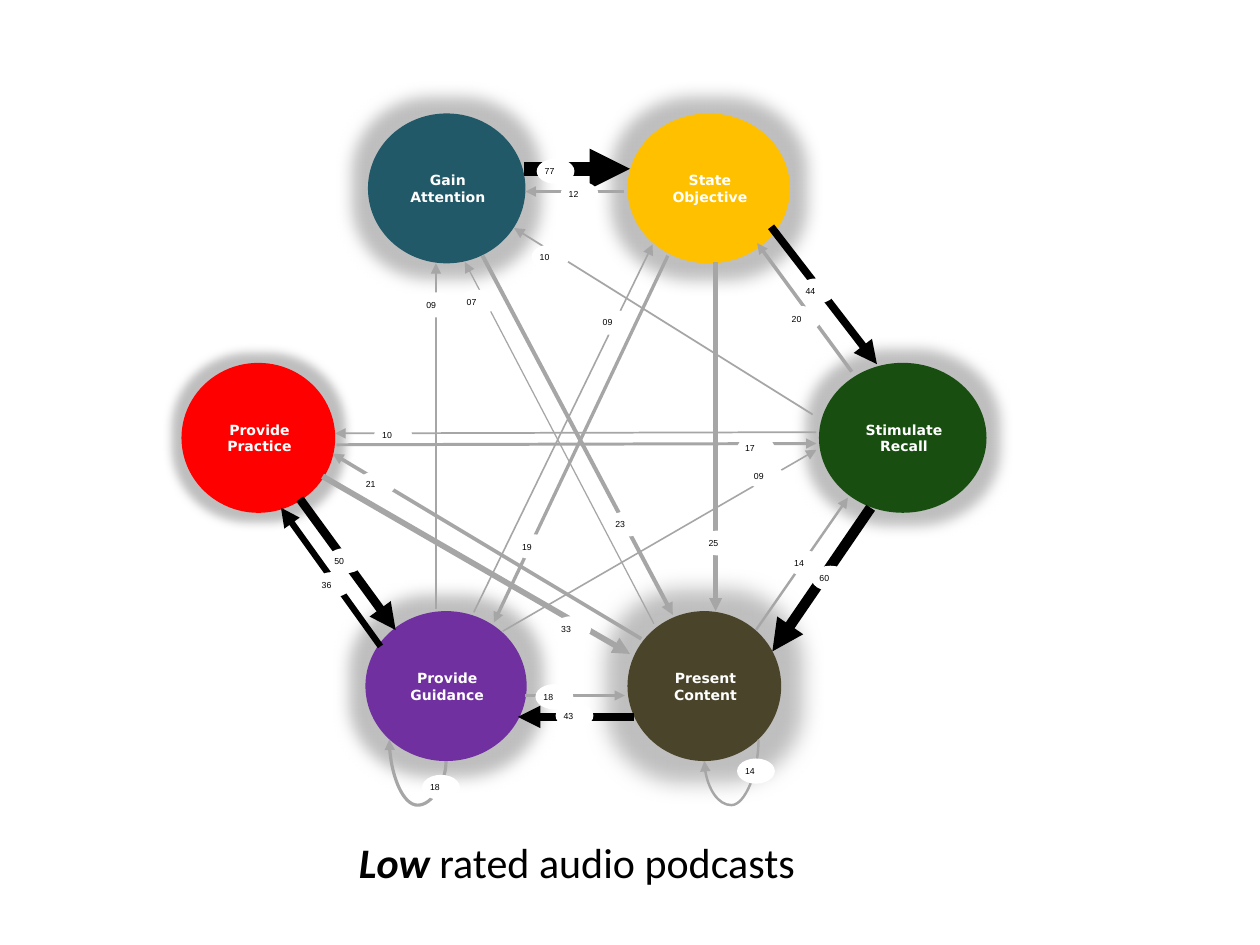
"""Build a slide mapping the transitions between teaching steps in low rated podcasts."""
from dataclasses import dataclass
from typing import NamedTuple

from pptx import Presentation
from pptx import util as u
from pptx.dml.color import RGBColor
from pptx.enum import shapes, text
from pptx.oxml.ns import qn
from lxml import etree


@dataclass(frozen=True)
class Theme:
    white: str = "FFFFFF"
    black: str = "000000"
    minor: str = "A6A6A6"
    glow: str = "BFBFBF"
    step_font: str = "DejaVu Sans"
    label_font: str = "Arial"
    caption_font: str = "Calibri"
    step_size: float = 8
    label_size: float = 5
    caption_size: float = 24


class Step(NamedTuple):
    name: str
    left: float
    top: float
    width: float
    color: str
    glow: float


class Flow(NamedTuple):
    value: int
    start: tuple[float, float]
    end: tuple[float, float]
    label: tuple[float, float]
    loop: bool = False


THEME = Theme()
STEP_HEIGHT = 1.19
LABEL_SIZE = (0.3, 0.2)
LOOP_BOTTOM = 6.39
MAJOR_VALUE = 36

STEPS = [
    Step("Gain Attention", 2.92, 0.9, 1.25, "215968", 18),
    Step("State Objective", 4.98, 0.9, 1.29, "FFC000", 19),
    Step("Stimulate Recall", 6.5, 2.88, 1.33, "184F11", 15),
    Step("Present Content", 4.98, 4.85, 1.22, "4A452A", 25),
    Step("Provide Guidance", 2.9, 4.85, 1.28, "7030A0", 18),
    Step("Provide Practice", 1.44, 2.88, 1.22, "FF0000", 11),
]

FLOWS = [
    Flow(77, (4.16, 1.34), (5, 1.34), (4.26, 1.26)),
    Flow(23, (3.83, 2.03), (5.34, 4.88), (4.82, 4.06)),
    Flow(12, (4.95, 1.52), (4.17, 1.52), (4.45, 1.44)),
    Flow(44, (6.12, 1.8), (6.96, 2.89), (6.33, 2.21)),
    Flow(25, (5.68, 2.08), (5.68, 4.85), (5.56, 4.21)),
    Flow(19, (5.3, 2.03), (3.92, 4.94), (4.08, 4.24)),
    Flow(10, (6.45, 3.29), (4.08, 1.81), (4.22, 1.94)),
    Flow(20, (6.76, 2.95), (6.01, 1.93), (6.22, 2.43)),
    Flow(60, (6.91, 4.03), (6.13, 5.17), (6.44, 4.49)),
    Flow(10, (6.48, 3.43), (2.66, 3.44), (2.97, 3.35)),
    Flow(7, (5.19, 4.95), (3.69, 2.08), (3.64, 2.3)),
    Flow(14, (6, 5), (6.73, 3.95), (6.24, 4.37)),
    Flow(14, (6.02, 5.87), (5.59, 6.04), (5.85, 6.02), loop=True),
    Flow(43, (5.03, 5.69), (4.11, 5.69), (4.41, 5.58)),
    Flow(21, (5.09, 5.07), (2.64, 3.6), (2.84, 3.74)),
    Flow(9, (3.46, 4.83), (3.46, 2.09), (3.32, 2.32)),
    Flow(9, (3.76, 4.86), (5.18, 1.94), (4.72, 2.46)),
    Flow(9, (3.99, 5.01), (6.48, 3.57), (5.92, 3.68)),
    Flow(18, (4.17, 5.52), (4.96, 5.52), (4.25, 5.43)),
    Flow(18, (3.54, 6.04), (3.09, 5.87), (3.35, 6.15), loop=True),
    Flow(36, (3.02, 5.13), (2.23, 4.03), (2.49, 4.54)),
    Flow(17, (2.67, 3.53), (6.48, 3.52), (5.85, 3.46)),
    Flow(33, (2.56, 3.78), (5, 5.19), (4.39, 4.89)),
    Flow(50, (2.38, 3.96), (3.14, 5), (2.59, 4.35)),
]


def add_text(paragraph, content: str, *, font: str, size: float, color: str,
             bold: bool = False, italic: bool = False) -> None:
    run = paragraph.add_run()
    run.text = content
    run.font.name = font
    run.font.size = u.Pt(size)
    run.font.color.rgb = RGBColor.from_string(color)
    run.font.bold = bold
    run.font.italic = italic


def add_ellipse(slide, left: float, top: float, width: float, height: float,
                fill: str, content: str, align, **text_format):
    shape = slide.shapes.add_shape(
        shapes.MSO_SHAPE.OVAL, *map(u.Inches, (left, top, width, height)))
    shape.shadow.inherit = False
    shape.fill.solid()
    shape.fill.fore_color.rgb = RGBColor.from_string(fill)
    shape.line.fill.background()
    frame = shape.text_frame
    frame.word_wrap = True
    frame.vertical_anchor = text.MSO_ANCHOR.MIDDLE
    frame.margin_left = u.Inches(0.02)
    frame.margin_top = frame.margin_right = frame.margin_bottom = 0
    paragraph = frame.paragraphs[0]
    paragraph.alignment = align
    add_text(paragraph, content, **text_format)
    return shape


def draw_step(slide, step: Step) -> None:
    shape = add_ellipse(slide, step.left, step.top, step.width, STEP_HEIGHT, step.color,
                        step.name, text.PP_ALIGN.CENTER, font=THEME.step_font,
                        size=THEME.step_size, color=THEME.white, bold=True)
    effects = shape._element.spPr.find(qn("a:effectLst"))
    glow = etree.SubElement(effects, qn("a:glow"), rad=str(u.Pt(step.glow)))
    etree.SubElement(glow, qn("a:srgbClr"), val=THEME.glow)


def add_loop(slide, flow: Flow):
    (start_x, start_y), (end_x, end_y) = flow.start, flow.end
    middle_x, middle_y = (start_x + end_x) / 2, (start_y + end_y) / 2
    run, rise = end_y - start_y, abs(end_x - start_x)
    loop = slide.shapes.add_connector(
        shapes.MSO_CONNECTOR.CURVE,
        u.Inches(middle_x - run / 2), u.Inches(middle_y - rise / 2),
        u.Inches(middle_x + run / 2), u.Inches(middle_y + rise / 2))
    properties = loop._element.spPr
    properties.find(qn("a:xfrm")).set("rot", "5400000")
    guides = properties.find(qn("a:prstGeom")).find(qn("a:avLst"))
    depth = round((LOOP_BOTTOM - start_y) / run * 100000)
    etree.SubElement(guides, qn("a:gd"), name="adj1", fmla=f"val {depth}")
    return loop


def draw_flow(slide, flow: Flow) -> None:
    if flow.loop:
        arrow = add_loop(slide, flow)
    else:
        arrow = slide.shapes.add_connector(
            shapes.MSO_CONNECTOR.STRAIGHT, *map(u.Inches, flow.start + flow.end))
    color = THEME.black if flow.value >= MAJOR_VALUE else THEME.minor
    arrow.line.color.rgb = RGBColor.from_string(color)
    arrow.line.width = u.Pt(flow.value / 10)
    line = arrow._element.spPr.find(qn("a:ln"))
    etree.SubElement(line, qn("a:tailEnd"), type="triangle")
    etree.SubElement(arrow._element.spPr, qn("a:effectLst"))
    add_ellipse(slide, *flow.label, *LABEL_SIZE, THEME.white, f"{flow.value:02}",
                text.PP_ALIGN.LEFT, font=THEME.label_font, size=THEME.label_size,
                color=THEME.black)


def draw_caption(slide) -> None:
    caption = slide.shapes.add_textbox(*map(u.Inches, (2.75, 6.59, 4.79, 0.5)))
    frame = caption.text_frame
    frame.word_wrap = True
    frame.auto_size = text.MSO_AUTO_SIZE.SHAPE_TO_FIT_TEXT
    for content, emphasis in (("Low", True), (" rated audio podcasts", False)):
        add_text(frame.paragraphs[0], content, font=THEME.caption_font,
                 size=THEME.caption_size, color=THEME.black, bold=emphasis, italic=emphasis)


def main() -> None:
    presentation = Presentation()
    presentation.slide_width = u.Inches(10)
    presentation.slide_height = u.Inches(7.5)
    slide = presentation.slides.add_slide(presentation.slide_layouts[6])
    for step in STEPS:
        draw_step(slide, step)
    for flow in FLOWS:
        draw_flow(slide, flow)
    draw_caption(slide)
    presentation.save("out.pptx")


if __name__ == "__main__":
    main()
